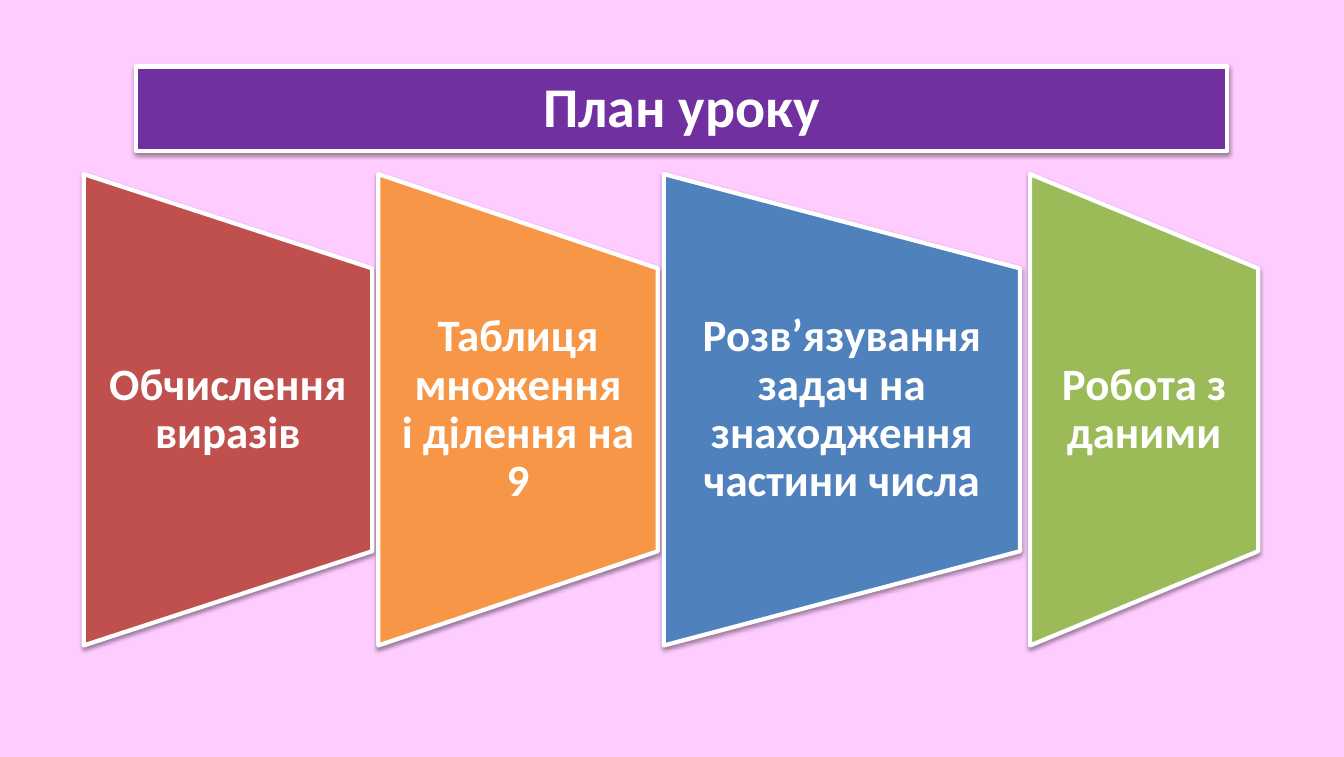
from dataclasses import dataclass

from pptx import Presentation
from pptx.dml.color import RGBColor
from pptx.enum.shapes import MSO_SHAPE as Preset
from pptx.enum.text import MSO_ANCHOR as Anchor, MSO_AUTO_SIZE as AutoSize, PP_ALIGN as Align
from pptx.oxml import parse_xml
from pptx.oxml.ns import nsdecls, qn
from pptx.util import Inches, Pt


@dataclass(frozen=True)
class Theme:
    font: str = "Calibri"
    title_size: int = 40
    step_size: int = 32
    outline_width: int = 3
    background: str = "FFCCFF"
    white: str = "FFFFFF"
    purple: str = "7030A0"
    red: str = "C0504D"
    orange: str = "F79646"
    blue: str = "4F81BD"
    green: str = "9BBB59"


THEME = Theme()
STEP_CENTER_Y = 4.06
STEP_HEIGHT = 4.67
LABEL_HEIGHT = 2.8
LABEL_INSET = 0.22

# left, width, colour, label
STEPS = [
    (0.83, 2.86, THEME.red, "Обчислення виразів"),
    (3.75, 2.77, THEME.orange, "Таблиця множення\vі ділення на 9"),
    (6.58, 3.53, THEME.blue, "Розв’язування задач на знаходження частини числа"),
    (10.21, 2.26, THEME.green, "Робота з даними"),
]


def place(shape, left, top, width, height):
    shape.left, shape.top = Inches(left), Inches(top)
    shape.width, shape.height = Inches(width), Inches(height)


class PlanSlide:
    def __init__(self, prs, theme):
        self.theme = theme
        self.slide = prs.slides.add_slide(prs.slide_layouts[5])
        background = self.slide.background.fill
        background.solid()
        background.fore_color.rgb = RGBColor.from_string(theme.background)

    def paint(self, shape, color):
        """Apply the fill, white outline and soft lower shadow."""
        shape.fill.solid()
        shape.fill.fore_color.rgb = RGBColor.from_string(color)
        shape.line.color.rgb = RGBColor.from_string(self.theme.white)
        shape.line.width = Pt(self.theme.outline_width)
        shape.shadow.inherit = False
        effects = shape._element.spPr.find(qn("a:effectLst"))
        effects.append(parse_xml(
            f'<a:outerShdw {nsdecls("a")} blurRad="{Pt(3.1)}" dist="{Pt(1.6)}" '
            'dir="5400000" rotWithShape="0"><a:srgbClr val="000000">'
            '<a:alpha val="38000"/></a:srgbClr></a:outerShdw>'))

    def set_text(self, frame, text, size):
        frame.word_wrap = True
        frame.text = text
        paragraph = frame.paragraphs[0]
        paragraph.alignment = Align.CENTER
        font = paragraph.font
        font.name, font.size, font.bold = self.theme.font, Pt(size), True
        font.color.rgb = RGBColor.from_string(self.theme.white)
        return paragraph

    def title(self, text):
        banner = self.slide.shapes.title
        place(banner, 1.35, 0.66, 10.81, 0.77)
        self.paint(banner, self.theme.purple)
        frame = banner.text_frame
        self.set_text(frame, text, self.theme.title_size)
        frame.vertical_anchor = Anchor.TOP
        frame.auto_size = AutoSize.SHAPE_TO_FIT_TEXT

    def step(self, left, width, color, text):
        """Draw a trapezoid narrowing to the right, with upright text over it."""
        center_x = left + width / 2
        trapezoid = self.slide.shapes.add_shape(
            Preset.FLOWCHART_MANUAL_OPERATION,
            Inches(center_x - STEP_HEIGHT / 2), Inches(STEP_CENTER_Y - width / 2),
            Inches(STEP_HEIGHT), Inches(width))
        trapezoid.rotation = 270
        self.paint(trapezoid, color)

        label = self.slide.shapes.add_textbox(
            Inches(left), Inches(STEP_CENTER_Y - LABEL_HEIGHT / 2),
            Inches(width), Inches(LABEL_HEIGHT))
        frame = label.text_frame
        frame.margin_left = frame.margin_right = Inches(LABEL_INSET)
        frame.margin_top = frame.margin_bottom = 0
        frame.vertical_anchor = Anchor.MIDDLE
        self.set_text(frame, text, self.theme.step_size).line_spacing = 0.9


def main():
    prs = Presentation()
    prs.slide_width, prs.slide_height = Inches(13.32), Inches(7.5)
    plan = PlanSlide(prs, THEME)
    plan.title("План уроку")
    for step in STEPS:
        plan.step(*step)
    prs.save("out.pptx")


if __name__ == "__main__":
    main()
